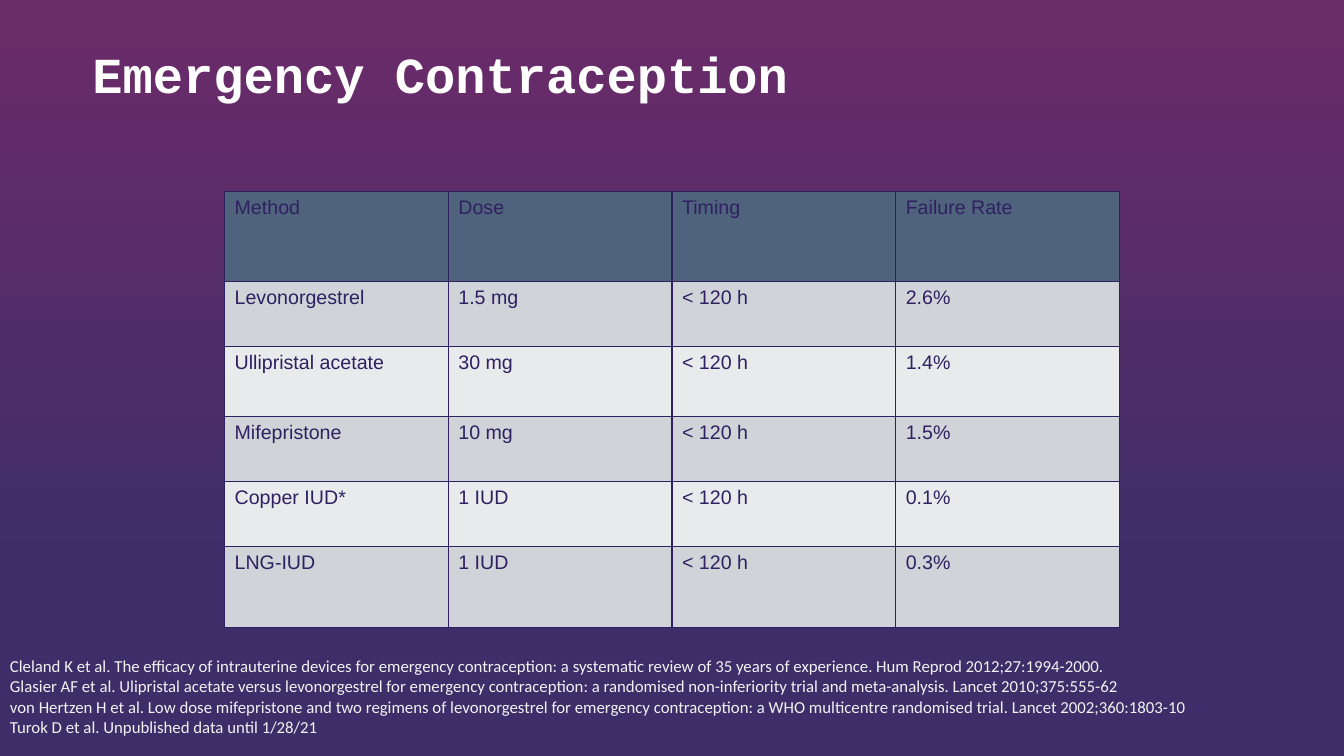
from lxml.etree import SubElement
from pptx import Presentation
from pptx.dml.color import RGBColor
from pptx.enum.text import MSO_ANCHOR as Anchor, MSO_AUTO_SIZE as AutoSize
from pptx.oxml.ns import qn
from pptx.util import Pt

PLUM = RGBColor(0x6C, 0x2B, 0x69)
INDIGO = RGBColor(0x3D, 0x2E, 0x69)
NAVY = RGBColor(0x2E, 0x20, 0x61)
SLATE = RGBColor(0x50, 0x63, 0x7C)
GREY = RGBColor(0xD0, 0xD3, 0xD7)
LIGHT_GREY = RGBColor(0xE9, 0xEA, 0xEC)
WHITE = RGBColor(0xFF, 0xFF, 0xFF)
OFF_WHITE = RGBColor(0xF2, 0xF2, 0xF2)

METHODS = [
    ("Method", "Dose", "Timing", "Failure Rate"),
    ("Levonorgestrel", "1.5 mg", "< 120 h", "2.6%"),
    ("Ullipristal acetate", "30 mg", "< 120 h", "1.4%"),
    ("Mifepristone", "10 mg", "< 120 h", "1.5%"),
    ("Copper IUD*", "1 IUD", "< 120 h", "0.1%"),
    ("LNG-IUD", "1 IUD", "< 120 h", "0.3%"),
]
ROW_HEIGHTS = [64.4, 46.4, 50, 46.4, 46.4, 58]

REFERENCES = [
    "Cleland K et al. The efficacy of intrauterine devices for emergency contraception: "
    "a systematic review of 35 years of experience. Hum Reprod 2012;27:1994-2000.",
    "Glasier AF et al. Ulipristal acetate versus levonorgestrel for emergency contraception: "
    "a randomised non-inferiority trial and meta-analysis. Lancet 2010;375:555-62",
    "von Hertzen H et al. Low dose mifepristone and two regimens of levonorgestrel for emergency "
    "contraception: a WHO multicentre randomised trial. Lancet 2002;360:1803-10",
    "Turok D et al. Unpublished data until 1/28/21",
]


def add_run(paragraph, text, font_name, size, color, bold=False):
    run = paragraph.add_run()
    run.text = text
    run.font.name = font_name
    run.font.size = Pt(size)
    run.font.color.rgb = color
    run.font.bold = bold


def paint_background(slide):
    fill = slide.background.fill
    fill.gradient()
    fill.gradient_angle = 270
    for stop, position, color in zip(fill.gradient_stops, (0, 0.75), (PLUM, INDIGO)):
        stop.position = position
        stop.color.rgb = color


def add_title(slide, left, top, width, height):
    box = slide.shapes.add_textbox(Pt(left), Pt(top), Pt(width), Pt(height))
    frame = box.text_frame
    frame.word_wrap = True
    frame.vertical_anchor = Anchor.BOTTOM
    paragraph = frame.paragraphs[0]
    paragraph.line_spacing = 0.9
    add_run(paragraph, "Emergency Contraception", "Courier New", 36, WHITE, bold=True)


def add_borders(cell, color, width):
    properties = cell._tc.get_or_add_tcPr()
    for side in ("a:lnL", "a:lnR", "a:lnT", "a:lnB"):
        line = SubElement(properties, qn(side), w=str(Pt(width)))
        solid = SubElement(line, qn("a:solidFill"))
        SubElement(solid, qn("a:srgbClr"), val=str(color))


def add_method_table(slide, left, top, width):
    column_count = len(METHODS[0])
    frame = slide.shapes.add_table(len(METHODS), column_count, Pt(left), Pt(top),
                                   Pt(width), Pt(sum(ROW_HEIGHTS)))
    table = frame.table
    table.first_row = False
    table.horz_banding = False
    for column in table.columns:
        column.width = Pt(width / column_count)

    for row_index, (values, height) in enumerate(zip(METHODS, ROW_HEIGHTS)):
        table.rows[row_index].height = Pt(height)
        # Header colour first, then alternating bands
        band = SLATE if row_index == 0 else (LIGHT_GREY, GREY)[row_index % 2]
        for column_index, value in enumerate(values):
            cell = table.cell(row_index, column_index)
            add_borders(cell, NAVY, 1)
            cell.fill.solid()
            cell.fill.fore_color.rgb = band
            add_run(cell.text_frame.paragraphs[0], value, "Arial", 14, NAVY)


def add_references(slide, left, top, width, height):
    box = slide.shapes.add_textbox(Pt(left), Pt(top), Pt(width), Pt(height))
    frame = box.text_frame
    frame.word_wrap = False
    frame.auto_size = AutoSize.SHAPE_TO_FIT_TEXT
    for index, reference in enumerate(REFERENCES):
        paragraph = frame.add_paragraph() if index else frame.paragraphs[0]
        add_run(paragraph, reference, "Calibri", 12, OFF_WHITE)


def main():
    presentation = Presentation()
    presentation.slide_width = Pt(960)
    presentation.slide_height = Pt(540)
    slide = presentation.slides.add_slide(presentation.slide_layouts[6])
    paint_background(slide)
    add_title(slide, 59, 18, 859, 60.5)
    add_method_table(slide, 160.4, 136.8, 639.2)
    add_references(slide, 0, 465, 868.5, 65.5)
    presentation.save("out.pptx")


if __name__ == "__main__":
    main()
